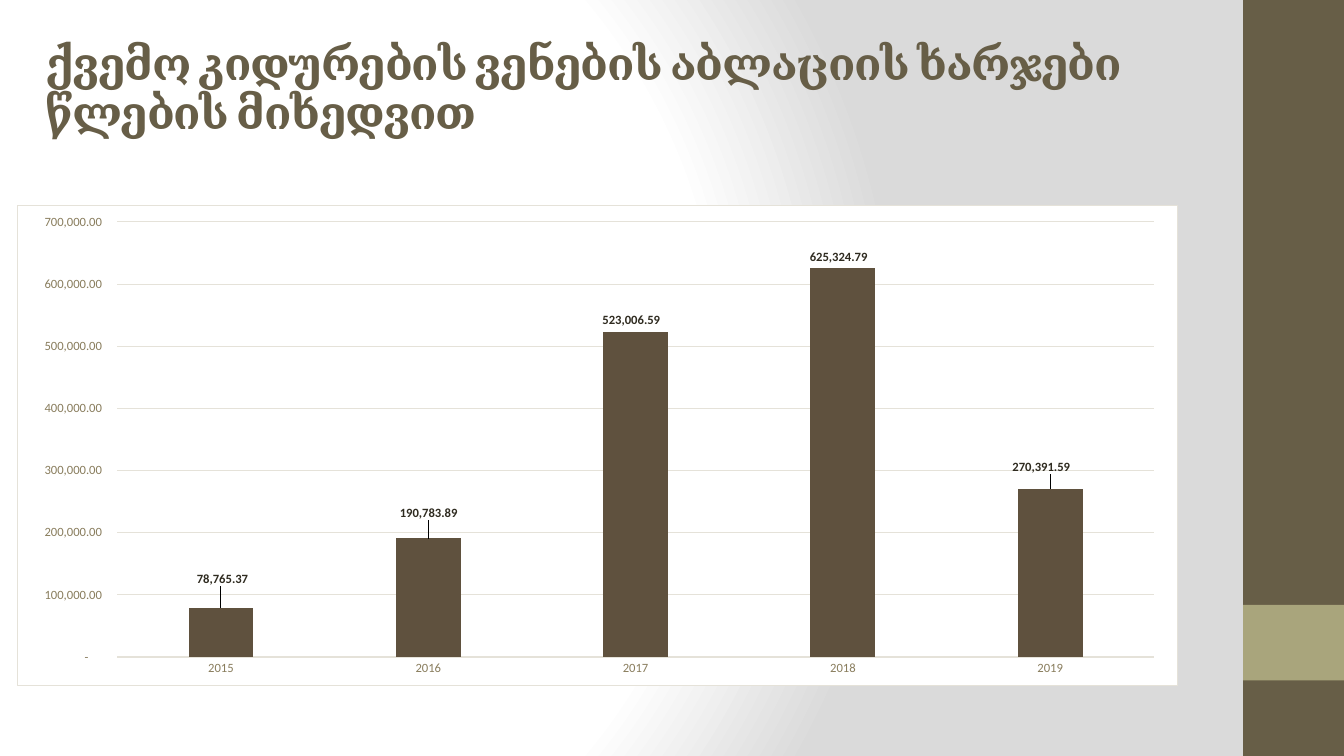
import pptx
import pptx.chart.data
import pptx.dml.color
import pptx.enum.chart
import pptx.enum.shapes
import pptx.enum.text
import pptx.oxml
import pptx.oxml.ns
import pptx.util
from pptx.util import Inches

COLORS = {
    "white": "FFFFFF",
    "gray": "DADADA",
    "olive": "675E47",
    "sage": "A9A57C",
    "bar": "5F513E",
    "label": "2F2B20",
    "axis": "897D5D",
    "grid": "E5E2D9",
}
NUMBER_FORMAT = r'_-* #,##0.00\ _₾_-;\-* #,##0.00\ _₾_-;_-* "-"??\ _₾_-;_-@_-'
COSTS = {
    "2015": 78765.37,
    "2016": 190783.89,
    "2017": 523006.59,
    "2018": 625324.79,
    "2019": 270391.59,
}
# Shifts of the moved value labels, as shares of the chart size
LABEL_SHIFTS = {0: (0.005, -0.037), 1: (0.004, -0.029), 4: (-0.004, -0.021)}


def rgb(name):
    return pptx.dml.color.RGBColor.from_string(COLORS[name])


def xml(text):
    prefixes = pptx.oxml.ns.nsdecls("a", "c")
    return pptx.oxml.parse_xml(text.replace(">", f" {prefixes}>", 1))


def set_background(slide):
    fill = slide.background.fill
    fill.gradient()
    gradient = slide.background._cSld.bg.bgPr.find(pptx.oxml.ns.qn("a:gradFill"))
    for child in list(gradient):
        gradient.remove(child)
    stops = "".join(
        f'<a:gs pos="{position * 1000}"><a:srgbClr val="{COLORS[color]}"/></a:gs>'
        for position, color in ((0, "white"), (75, "white"), (100, "gray"))
    )
    gradient.append(xml(f"<a:gsLst>{stops}</a:gsLst>"))
    gradient.append(xml(
        '<a:path path="circle"><a:fillToRect l="20000" t="50000" r="100000" b="50000"/></a:path>'
    ))


def add_band(slide, top, height, color):
    shape = slide.shapes.add_shape(
        pptx.enum.shapes.MSO_SHAPE.RECTANGLE,
        Inches(12.33), Inches(top), Inches(1), Inches(height),
    )
    shape.shadow.inherit = False
    shape.fill.solid()
    shape.fill.fore_color.rgb = rgb(color)
    shape.line.fill.background()


def set_font(font, size, color, bold=False, name="Calibri"):
    font.name = name
    font.size = pptx.util.Pt(size)
    font.bold = bold
    font.color.rgb = rgb(color)


def add_title(slide, text):
    box = slide.shapes.add_textbox(Inches(0.35), Inches(0.25), Inches(11.43), Inches(1.3))
    text_frame = box.text_frame
    text_frame.word_wrap = True
    text_frame.vertical_anchor = pptx.enum.text.MSO_ANCHOR.MIDDLE
    text_frame.text = text
    paragraph = text_frame.paragraphs[0]
    paragraph.line_spacing = 0.9
    for run in paragraph.runs:
        set_font(run.font, 32, "olive", True, "Cambria")
        run.font._element.set("spc", "-100")


def set_line(line):
    line.color.rgb = rgb("grid")
    line.width = pptx.util.Pt(0.75)


def manual_layout(x, y, mode="", size=""):
    return xml(
        f'<c:layout><c:manualLayout>{mode}<c:x val="{x}"/><c:y val="{y}"/>{size}'
        "</c:manualLayout></c:layout>"
    )


def style_axes(chart):
    for axis in (chart.category_axis, chart.value_axis):
        axis.major_tick_mark = pptx.enum.chart.XL_TICK_MARK.NONE
        axis.minor_tick_mark = pptx.enum.chart.XL_TICK_MARK.NONE
        set_font(axis.tick_labels.font, 9, "axis")
    set_line(chart.category_axis.format.line)
    value_axis = chart.value_axis
    value_axis.minimum_scale = 0
    value_axis.maximum_scale = 700000
    value_axis.major_unit = 100000
    value_axis.format.line.fill.background()
    set_line(value_axis.major_gridlines.format.line)
    value_axis.tick_labels.number_format = NUMBER_FORMAT
    value_axis.tick_labels.number_format_is_linked = False


def style_labels(series):
    position = pptx.enum.chart.XL_LABEL_POSITION.OUTSIDE_END
    labels = series.data_labels
    labels.show_value = True
    labels.position = position
    labels.number_format = NUMBER_FORMAT
    labels.number_format_is_linked = False
    set_font(labels.font, 9, "label", True)
    for index in LABEL_SHIFTS:
        label = series.points[index].data_label
        set_font(label.font, 9, "label", True)
        label.position = position
    moved_labels = labels._element.findall(pptx.oxml.ns.qn("c:dLbl"))
    for element, (x, y) in zip(moved_labels, LABEL_SHIFTS.values()):
        element.insert(1, manual_layout(x, y))


def style_chart_area(chart):
    chart_space = chart._chartSpace
    area = xml(
        f'<c:spPr><a:solidFill><a:srgbClr val="{COLORS["white"]}"/></a:solidFill>'
        f'<a:ln w="9525"><a:solidFill><a:srgbClr val="{COLORS["grid"]}"/></a:solidFill></a:ln></c:spPr>'
    )
    chart_space.chart.addnext(area)
    plot_area = chart_space.chart.plotArea
    for layout in plot_area.findall(pptx.oxml.ns.qn("c:layout")):
        plot_area.remove(layout)
    plot_area.insert(0, manual_layout(
        0.086, 0.035,
        mode='<c:layoutTarget val="inner"/><c:xMode val="edge"/><c:yMode val="edge"/>',
        size='<c:w val="0.894"/><c:h val="0.905"/>',
    ))


def add_cost_chart(slide):
    data = pptx.chart.data.CategoryChartData(number_format=NUMBER_FORMAT)
    data.categories = list(COSTS)
    data.add_series("Series 1", list(COSTS.values()))
    chart = slide.shapes.add_chart(
        pptx.enum.chart.XL_CHART_TYPE.COLUMN_CLUSTERED,
        Inches(0.17), Inches(2.03), Inches(11.51), Inches(4.78), data,
    ).chart
    chart.has_legend = False
    chart.has_title = False
    set_font(chart.font, 10, "label")
    plot = chart.plots[0]
    plot.gap_width = 219
    plot.vary_by_categories = False
    series = plot.series[0]
    series.format.fill.solid()
    series.format.fill.fore_color.rgb = rgb("bar")
    style_axes(chart)
    style_labels(series)
    style_chart_area(chart)


def main():
    presentation = pptx.Presentation()
    presentation.slide_width = Inches(13.33)
    presentation.slide_height = Inches(7.5)
    slide = presentation.slides.add_slide(presentation.slide_layouts[6])
    set_background(slide)
    # Side band with its accent block
    add_band(slide, 0, 7.5, "olive")
    add_band(slide, 6, 0.75, "sage")
    # Title and yearly costs
    add_title(slide, "ქვემო კიდურების ვენების აბლაციის ხარჯები\vწლების მიხედვით")
    add_cost_chart(slide)
    presentation.save("out.pptx")


if __name__ == "__main__":
    main()
